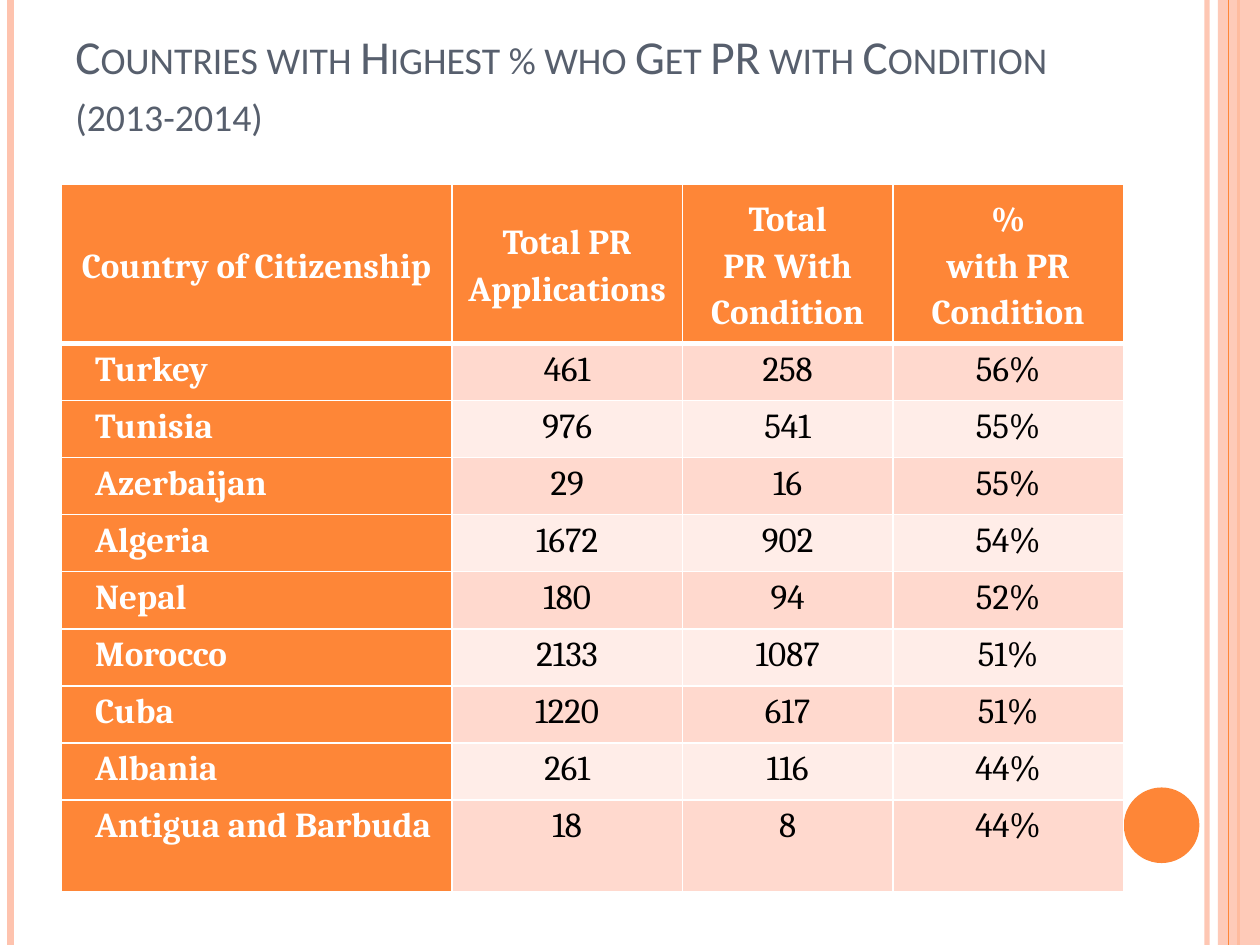
from dataclasses import dataclass

from lxml import etree
from pptx import Presentation
from pptx.dml.color import RGBColor
from pptx.enum.dml import MSO_FILL
from pptx.enum.shapes import MSO_CONNECTOR, MSO_SHAPE
from pptx.enum.text import MSO_ANCHOR, PP_ALIGN
from pptx.oxml.ns import qn
from pptx.util import Pt

STRAIGHT = MSO_CONNECTOR.STRAIGHT
RECTANGLE, OVAL = MSO_SHAPE.RECTANGLE, MSO_SHAPE.OVAL
TOP, MIDDLE, BOTTOM = MSO_ANCHOR.TOP, MSO_ANCHOR.MIDDLE, MSO_ANCHOR.BOTTOM
LEFT, CENTER = PP_ALIGN.LEFT, PP_ALIGN.CENTER
SOLID = MSO_FILL.SOLID

WHITE = RGBColor(0xFF, 0xFF, 0xFF)
BLACK = RGBColor(0x00, 0x00, 0x00)
SLATE = RGBColor(0x57, 0x5F, 0x6D)
ORANGE = RGBColor(0xFE, 0x86, 0x37)
PEACH = RGBColor(0xFE, 0xC3, 0xAE)
BANDS = (RGBColor(0xFF, 0xD9, 0xCE), RGBColor(0xFF, 0xED, 0xE8))

SLIDE_WIDTH, SLIDE_HEIGHT = 720, 540
TITLE = "Countries with Highest % who Get PR with Condition (2013-2014)"
COLUMN_WIDTHS = (223.2, 131.8, 120.2, 131.8)
HEADER_HEIGHT, ROW_HEIGHT, LAST_HEIGHT = 91.2, 32.6, 52.4
THIN, THICK = 1, 3


@dataclass
class Stripe:
    x: float
    width: float
    color: RGBColor
    opacity: int = 100


@dataclass
class Block:
    preset: MSO_SHAPE
    left: float
    top: float
    width: float
    height: float
    color: RGBColor
    opacity: int = 100


@dataclass
class CellStyle:
    fill: RGBColor
    color: RGBColor
    bold: bool
    anchor: MSO_ANCHOR
    alignment: PP_ALIGN
    indent: float = 0
    top_border: float = THIN
    bottom_border: float = THIN


DECORATIONS = (
    Stripe(689.8, 3, PEACH, 93),
    Stripe(6, 4.5, PEACH),
    Stripe(707.8, 1.5, ORANGE),
    Block(RECTANGLE, 696, 0, 24, SLIDE_HEIGHT, PEACH, 87),
    Stripe(702, 0.75, ORANGE),
    Block(OVAL, 642.2, 450, 43.2, 43.2, ORANGE),
)

HEADERS = (
    "Country of Citizenship",
    "Total PR Applications",
    "Total\nPR With Condition",
    "%\nwith PR Condition",
)

COUNTRIES = (
    ("Turkey", "461", "258", "56%"),
    ("Tunisia", "976", "541", "55%"),
    ("Azerbaijan", "29", "16", "55%"),
    ("Algeria", "1672", "902", "54%"),
    ("Nepal", "180", "94", "52%"),
    ("Morocco", "2133", "1087", "51%"),
    ("Cuba", "1220", "617", "51%"),
    ("Albania", "261", "116", "44%"),
    ("Antigua and Barbuda", "18", "8", "44%"),
)


def apply_format(target, values: dict) -> None:
    for name, value in values.items():
        setattr(target, name, value)


def set_opacity(element, percent: int) -> None:
    if percent < 100:
        color = next(element.iter(qn("a:srgbClr")))
        etree.SubElement(color, qn("a:alpha"), val=str(percent * 1000))


def draw_stripe(page, stripe: Stripe) -> None:
    line = page.shapes.add_connector(
        STRAIGHT, Pt(stripe.x), Pt(0), Pt(stripe.x), Pt(SLIDE_HEIGHT)
    )
    line.line.color.rgb = stripe.color
    line.line.width = Pt(stripe.width)
    properties = line._element.spPr
    set_opacity(properties, stripe.opacity)
    etree.SubElement(properties, qn("a:effectLst"))


def draw_block(page, block: Block) -> None:
    shape = page.shapes.add_shape(
        block.preset, Pt(block.left), Pt(block.top), Pt(block.width), Pt(block.height)
    )
    shape.shadow.inherit = False
    shape.fill.solid()
    shape.fill.fore_color.rgb = block.color
    shape.line.fill.background()
    set_opacity(shape._element.spPr, block.opacity)


def draw_title(page) -> None:
    box = page.shapes.add_textbox(Pt(36), Pt(21.6), Pt(588.2), Pt(62.6))
    apply_format(box.text_frame, {"word_wrap": True, "vertical_anchor": BOTTOM})
    span = box.text_frame.paragraphs[0].add_run()
    span.text = TITLE
    apply_format(span.font, {"name": "Calibri", "size": Pt(27)})
    span.font.color.rgb = SLATE
    span.font._element.set("cap", "small")


def add_border(cell, side: str, width: float) -> None:
    properties = cell._tc.get_or_add_tcPr()
    border = etree.SubElement(properties, qn(f"a:{side}"), w=str(Pt(width)))
    fill = etree.SubElement(border, qn("a:solidFill"))
    etree.SubElement(fill, qn("a:srgbClr"), val=str(WHITE))


def fill_cell(cell, text: str, style: CellStyle) -> None:
    cell.text = text
    apply_format(cell, {
        "vertical_anchor": style.anchor,
        "margin_left": Pt(5),
        "margin_right": Pt(5),
        "margin_top": Pt(0),
        "margin_bottom": Pt(0),
    })
    borders = {"lnL": THIN, "lnR": THIN, "lnT": style.top_border, "lnB": style.bottom_border}
    for side, width in borders.items():
        add_border(cell, side, width)
    cell.fill.solid()
    cell.fill.fore_color.rgb = style.fill
    for para in cell.text_frame.paragraphs:
        apply_format(para, {"alignment": style.alignment, "line_spacing": 1.15})
        if style.indent:
            para._p.get_or_add_pPr().set("marL", str(Pt(style.indent)))
        for span in para.runs:
            apply_format(span.font, {"name": "Cambria", "size": Pt(20), "bold": style.bold})
            span.font.color.rgb = style.color


def draw_table(page) -> None:
    heights = [HEADER_HEIGHT] + [ROW_HEIGHT] * (len(COUNTRIES) - 1) + [LAST_HEIGHT]
    table = page.shapes.add_table(
        len(heights), len(COLUMN_WIDTHS), Pt(35), Pt(105.1),
        Pt(sum(COLUMN_WIDTHS)), Pt(sum(heights)),
    ).table
    for column, width in zip(table.columns, COLUMN_WIDTHS):
        column.width = Pt(width)
    for row, height in zip(table.rows, heights):
        row.height = Pt(height)

    header = CellStyle(ORANGE, WHITE, True, MIDDLE, CENTER, bottom_border=THICK)
    for column, text in enumerate(HEADERS):
        fill_cell(table.cell(0, column), text, header)
    for row, country in enumerate(COUNTRIES, start=1):
        top_border = THICK if row == 1 else THIN
        name = CellStyle(ORANGE, WHITE, True, TOP, LEFT, 14.4, top_border)
        figure = CellStyle(BANDS[(row - 1) % 2], BLACK, False, TOP, CENTER, 0, top_border)
        for column, text in enumerate(country):
            fill_cell(table.cell(row, column), text, figure if column else name)


def main() -> None:
    deck = Presentation()
    apply_format(deck, {"slide_width": Pt(SLIDE_WIDTH), "slide_height": Pt(SLIDE_HEIGHT)})
    page = deck.slides.add_slide(deck.slide_layouts[6])
    for item in DECORATIONS:
        draw = draw_stripe if isinstance(item, Stripe) else draw_block
        draw(page, item)
    draw_title(page)
    draw_table(page)
    deck.save("out.pptx")


if __name__ == "__main__":
    main()
